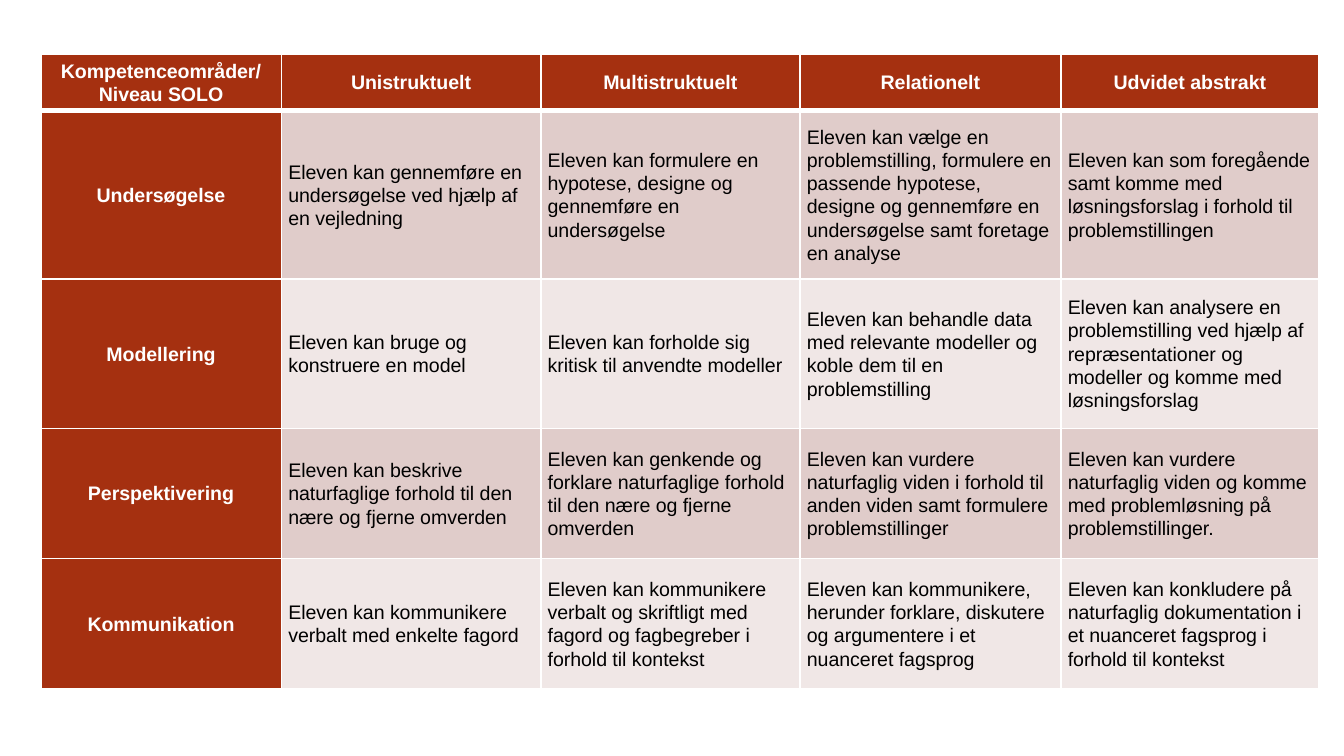
from dataclasses import dataclass

from lxml import etree
from pptx import Presentation
from pptx.dml.color import RGBColor
from pptx.enum.text import MSO_ANCHOR, PP_ALIGN
from pptx.oxml.ns import qn
from pptx.util import Cm, Pt

CENTER, LEFT = PP_ALIGN.CENTER, PP_ALIGN.LEFT
MIDDLE = MSO_ANCHOR.MIDDLE
BLANK_LAYOUT = 6


@dataclass(frozen=True)
class Theme:
    font: str = "Arial"
    size: float = 10.5
    line_spacing: float = 1.07
    heading_fill: str = "A53010"
    heading_text: str = "FFFFFF"
    body_text: str = "000000"
    bands: tuple[str, str] = ("E0CCCA", "F0E7E6")
    border: str = "FFFFFF"
    thin: float = 1
    thick: float = 3


@dataclass(frozen=True)
class Competence:
    name: str
    height: float  # cm
    levels: tuple[str, str, str, str]


THEME = Theme()

# Table content and measures
HEADINGS = ("Kompetenceområder/Niveau SOLO", "Unistruktuelt", "Multistruktuelt",
            "Relationelt", "Udvidet abstrakt")
COLUMN_WIDTHS = (4.55, 4.9, 4.9, 4.93, 4.88)
HEADING_HEIGHT = 1.07
COMPETENCES = (
    Competence("Undersøgelse", 3.18, (
        "Eleven kan gennemføre en undersøgelse ved hjælp af en vejledning",
        "Eleven kan formulere en hypotese, designe og gennemføre en undersøgelse",
        "Eleven kan vælge en problemstilling, formulere en passende hypotese, "
        "designe og gennemføre en undersøgelse samt foretage en analyse",
        "Eleven kan som foregående samt komme med løsningsforslag i forhold til "
        "problemstillingen")),
    Competence("Modellering", 2.82, (
        "Eleven kan bruge og konstruere en model",
        "Eleven kan forholde sig kritisk til anvendte modeller",
        "Eleven kan behandle data med relevante modeller og koble dem til en "
        "problemstilling",
        "Eleven kan analysere en problemstilling ved hjælp af repræsentationer og "
        "modeller og komme med løsningsforslag")),
    Competence("Perspektivering", 2.46, (
        "Eleven kan beskrive naturfaglige forhold til den nære og fjerne omverden",
        "Eleven kan genkende og forklare naturfaglige forhold til den nære og fjerne "
        "omverden",
        "Eleven kan vurdere naturfaglig viden i forhold til anden viden samt "
        "formulere problemstillinger",
        "Eleven kan vurdere naturfaglig viden og komme med problemløsning på "
        "problemstillinger.")),
    Competence("Kommunikation", 2.46, (
        "Eleven kan kommunikere verbalt med enkelte fagord",
        "Eleven kan kommunikere verbalt og skriftligt med fagord og fagbegreber i "
        "forhold til kontekst",
        "Eleven kan kommunikere, herunder forklare, diskutere og argumentere i et "
        "nuanceret fagsprog",
        "Eleven kan konkludere på naturfaglig dokumentation i et nuanceret fagsprog "
        "i forhold til kontekst")),
)


def set_borders(cell, top: float, bottom: float) -> None:
    """Draw the four cell borders; they must come before the fill in the XML."""
    properties = cell._tc.get_or_add_tcPr()
    sides = {"L": THEME.thin, "R": THEME.thin, "T": top, "B": bottom}
    for position, (side, width) in enumerate(sides.items()):
        line = etree.Element(qn(f"a:ln{side}"), w=str(Pt(width)))
        fill = etree.SubElement(line, qn("a:solidFill"))
        etree.SubElement(fill, qn("a:srgbClr"), val=THEME.border)
        properties.insert(position, line)


def fill_cell(cell, text: str, row: int, is_heading: bool) -> None:
    # Background and borders, with a heavy rule under the heading row
    cell.fill.solid()
    background = THEME.heading_fill if is_heading else THEME.bands[(row - 1) % 2]
    cell.fill.fore_color.rgb = RGBColor.from_string(background)
    set_borders(cell,
                top=THEME.thick if row == 1 else THEME.thin,
                bottom=THEME.thick if row == 0 else THEME.thin)

    # Text
    cell.vertical_anchor = MIDDLE
    cell.margin_left = cell.margin_right = Cm(0.13)
    cell.margin_top = cell.margin_bottom = 0
    para = cell.text_frame.paragraphs[0]
    para.alignment = CENTER if is_heading else LEFT
    para.line_spacing = THEME.line_spacing
    span = para.add_run()
    span.text = text
    span.font.name = THEME.font
    span.font.size = Pt(THEME.size)
    span.font.bold = is_heading
    color = THEME.heading_text if is_heading else THEME.body_text
    span.font.color.rgb = RGBColor.from_string(color)


def add_competence_table(page) -> None:
    rows = [HEADINGS] + [(item.name, *item.levels) for item in COMPETENCES]
    heights = [HEADING_HEIGHT] + [item.height for item in COMPETENCES]
    table = page.shapes.add_table(
        len(rows), len(HEADINGS), Cm(0.77), Cm(1.02),
        Cm(sum(COLUMN_WIDTHS)), Cm(sum(heights))).table
    for column, width in zip(table.columns, COLUMN_WIDTHS):
        column.width = Cm(width)
    for index, (texts, height) in enumerate(zip(rows, heights)):
        table.rows[index].height = Cm(height)
        for column, text in enumerate(texts):
            fill_cell(table.cell(index, column), text, index,
                      is_heading=index == 0 or column == 0)


def main() -> None:
    deck = Presentation()
    deck.slide_width, deck.slide_height = Cm(25.4), Cm(14.28)
    page = deck.slides.add_slide(deck.slide_layouts[BLANK_LAYOUT])
    add_competence_table(page)
    deck.save("out.pptx")


if __name__ == "__main__":
    main()
